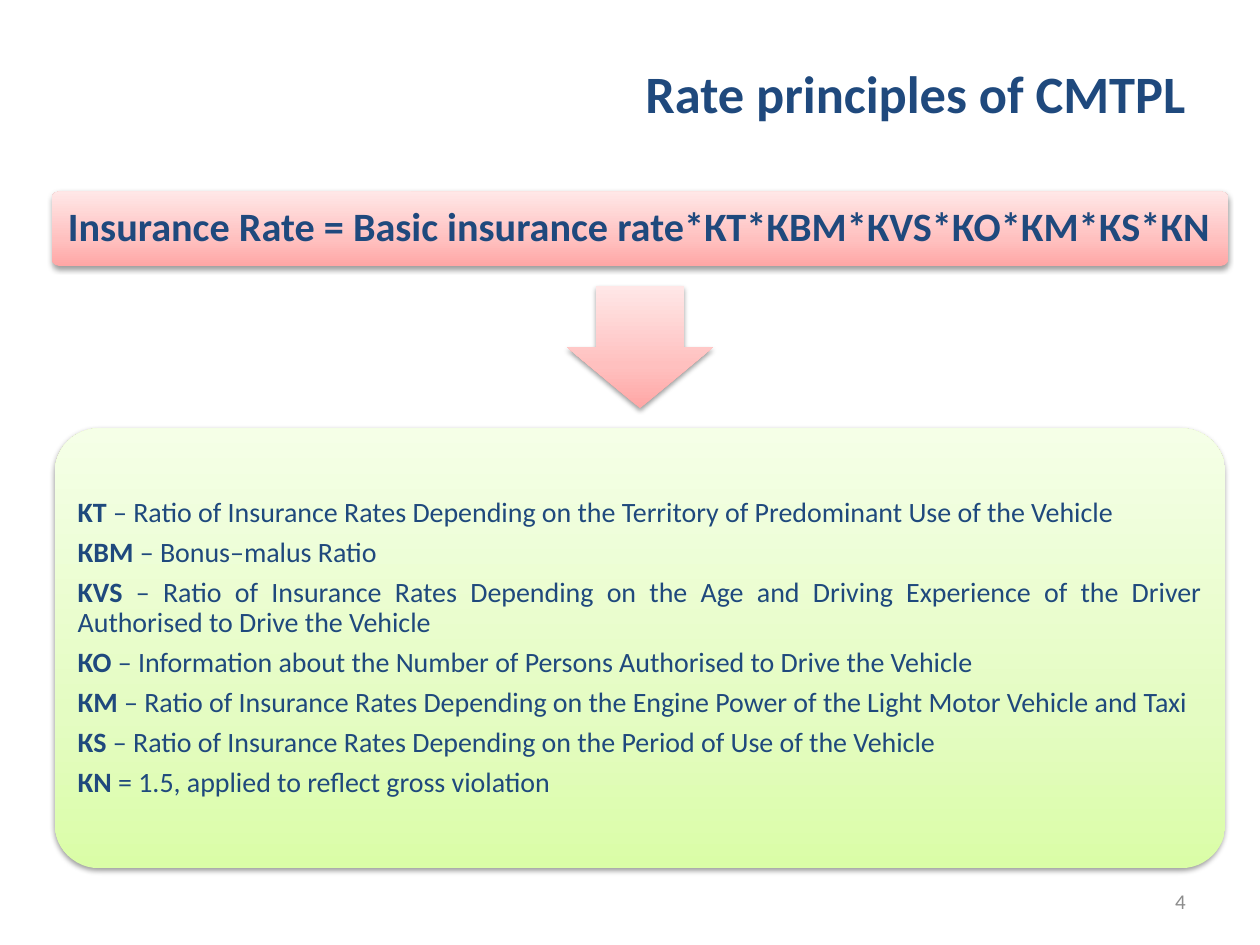
"""Build the slide on the rate principles of CMTPL."""
from lxml import etree
from pptx import Presentation
from pptx.dml.color import RGBColor
from pptx.enum.shapes import MSO_SHAPE
from pptx.enum.text import MSO_ANCHOR, PP_ALIGN
from pptx.oxml import parse_xml
from pptx.util import Inches, Pt

ROUNDED, ARROW = MSO_SHAPE.ROUNDED_RECTANGLE, MSO_SHAPE.DOWN_ARROW
MIDDLE = MSO_ANCHOR.MIDDLE
CENTER, RIGHT, JUSTIFY = PP_ALIGN.CENTER, PP_ALIGN.RIGHT, PP_ALIGN.JUSTIFY
FONT = "Calibri"
NAVY = RGBColor(0x1F, 0x49, 0x7D)
GRAY = RGBColor(0x8C, 0x8C, 0x8C)
PINKS = [RGBColor(0xFF, 0xA6, 0xA5), RGBColor(0xFF, 0xC0, 0xBF), RGBColor(0xFF, 0xE7, 0xE7)]
GREENS = [RGBColor(0xDA, 0xFD, 0xA7), RGBColor(0xE4, 0xFC, 0xC2), RGBColor(0xF5, 0xFF, 0xE7)]
STOPS = (0, 35, 100)
NAMESPACE = 'xmlns:a="http://schemas.openxmlformats.org/drawingml/2006/main"'

TITLE = "Rate principles of CMTPL"
PAGE = "4"
FORMULA = "Insurance Rate = Basic insurance rate*КТ*КBМ*КVS*КО*КМ*КS*КN"
RATIOS = [
    ("KT", " – Ratio of Insurance Rates Depending on the Territory of Predominant Use of the Vehicle"),
    ("КBМ", " – Bonus–malus Ratio"),
    ("KVS", " – Ratio of Insurance Rates Depending on the Age and Driving Experience of the Driver "
            "Authorised to Drive the Vehicle"),
    ("КО", " – Information about the Number of Persons Authorised to Drive the Vehicle"),
    ("КМ", " – Ratio of Insurance Rates Depending on the Engine Power of the Light Motor Vehicle and Taxi"),
    ("КS", " – Ratio of Insurance Rates Depending on the Period of Use of the Vehicle"),
    ("КN", " = 1.5, applied to reflect gross violation"),
]

WIDTH, HEIGHT = 10, 7.5
RIGHT_EDGE = 9.51
AXIS = 5.08


def write(shape, paragraphs, size, color=NAVY, align=RIGHT, spacing=1, after=0, margin=0.1):
    """Fill a shape with paragraphs of (bold lead, plain rest)."""
    frame = shape.text_frame
    frame.word_wrap = True
    frame.vertical_anchor = MIDDLE
    frame.margin_left = frame.margin_right = Inches(margin)
    frame.margin_top = frame.margin_bottom = Inches(min(margin, 0.08))
    for index, parts in enumerate(paragraphs):
        paragraph = frame.add_paragraph() if index else frame.paragraphs[0]
        paragraph.alignment = align
        paragraph.line_spacing = spacing
        paragraph.space_after = Pt(after)
        for text, bold in zip(parts, (True, False)):
            if text:
                run = paragraph.add_run()
                run.text = text
                run.font.name, run.font.size, run.font.bold = FONT, Pt(size), bold
                run.font.color.rgb = color


def add_text(slide, left, top, width, height, paragraphs, size, **style):
    """Add a text box."""
    box = slide.shapes.add_textbox(*map(Inches, (left, top, width, height)))
    write(box, paragraphs, size, **style)


def add_panel(slide, kind, top, width, height, colors, adjustments):
    """Add a shape centred on the axis, with an upward gradient and a soft shadow."""
    box = (AXIS - width / 2, top, width, height)
    shape = slide.shapes.add_shape(kind, *map(Inches, box))
    for index, value in enumerate(adjustments):
        shape.adjustments[index] = value
    shape.line.fill.background()
    shape.shadow.inherit = False
    properties = shape.element.spPr
    stops = "".join(
        f'<a:gs pos="{stop * 1000}"><a:srgbClr val="{color}"/></a:gs>'
        for stop, color in zip(STOPS, colors))
    gradient = parse_xml(
        f'<a:gradFill {NAMESPACE} rotWithShape="1"><a:gsLst>{stops}</a:gsLst>'
        '<a:lin ang="16200000" scaled="0"/></a:gradFill>')
    properties.insert(2, gradient)
    shadow = etree.fromstring(
        f'<a:outerShdw {NAMESPACE} blurRad="{Pt(3.1)}" dist="{Pt(1.6)}" dir="5400000" rotWithShape="0">'
        '<a:srgbClr val="000000"><a:alpha val="38000"/></a:srgbClr></a:outerShdw>')
    properties[-1].append(shadow)
    return shape


def main():
    """Lay out the slide and save it."""
    presentation = Presentation()
    presentation.slide_width, presentation.slide_height = Inches(WIDTH), Inches(HEIGHT)
    slide = presentation.slides.add_slide(presentation.slide_layouts[6])

    add_text(slide, RIGHT_EDGE - 7.5, 0.4, 7.5, 0.67, [(TITLE, "")], 30)
    add_text(slide, RIGHT_EDGE - 2.33, 6.95, 2.33, 0.4, [("", PAGE)], 12, color=GRAY)

    formula = add_panel(slide, ROUNDED, 1.52, 9.34, 0.59, PINKS, [0.1])
    write(formula, [(FORMULA, "")], 23, align=CENTER, spacing=0.9)
    add_panel(slide, ARROW, 2.27, 1.16, 0.97, PINKS, [0.6, 0.5])
    legend = add_panel(slide, ROUNDED, 3.4, 9.29, 3.49, GREENS, [0.1])
    write(legend, RATIOS, 16, align=JUSTIFY, spacing=0.9, after=5.6, margin=0.08)

    presentation.save("out.pptx")


if __name__ == "__main__":
    main()
